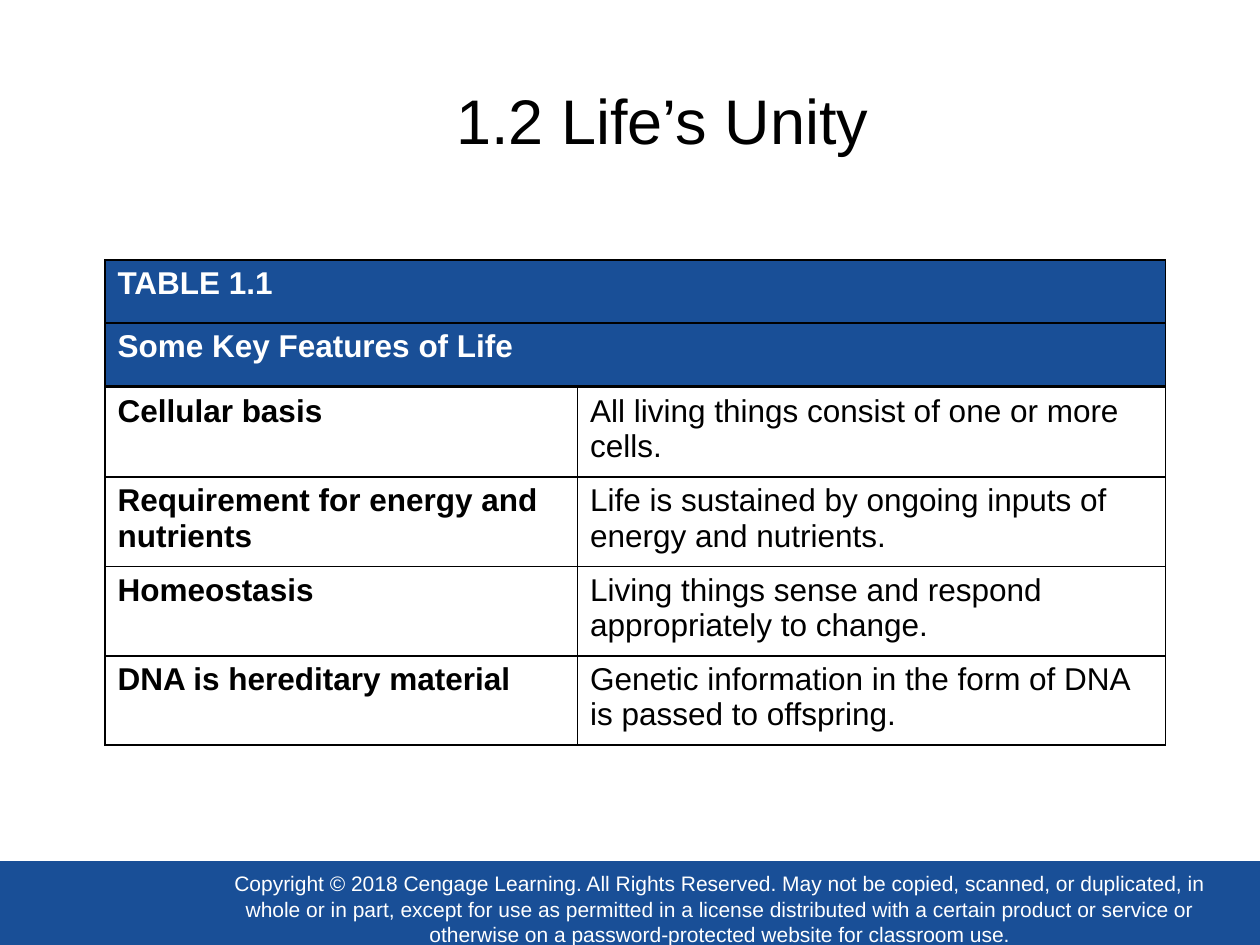
from lxml import etree
from pptx import Presentation
from pptx.dml.color import RGBColor
from pptx.enum import shapes, text
from pptx.oxml.ns import qn
from pptx.util import Pt

BLUE, WHITE, BLACK = "194F97", "FFFFFF", "000000"
FONT = "Arial"
COPYRIGHT = (
    "Copyright © 2018 Cengage Learning. All Rights Reserved. May not be copied, "
    "scanned, or duplicated, in whole or in part, except for use as permitted in "
    "a license distributed with a certain product or service or otherwise on a "
    "password-protected website for classroom use."
)
HEADINGS = [["TABLE 1.1"], ["Some Key Features of Life"]]
FEATURES = [
    ["Cellular basis", "All living things consist of one or more cells."],
    ["Requirement for energy and nutrients",
     "Life is sustained by ongoing inputs of energy and nutrients."],
    ["Homeostasis", "Living things sense and respond appropriately to change."],
    ["DNA is hereditary material",
     "Genetic information in the form of DNA is passed to offspring."],
]


def rgb(color):
    return RGBColor.from_string(color)


def add_run(p, words, size, color, bold=False):
    r = p.add_run()
    r.text = words
    r.font.name, r.font.size, r.font.bold = FONT, Pt(size), bold
    r.font.color.rgb = rgb(color)


def add_bar(slide, x, y, w, h):
    sp = slide.shapes.add_shape(
        shapes.MSO_SHAPE.RECTANGLE, Pt(x), Pt(y), Pt(w), Pt(h))
    sp.shadow.inherit = False
    sp.fill.solid()
    sp.fill.fore_color.rgb = rgb(BLUE)
    sp.line.fill.background()
    return sp


def add_footer(slide, x, y, w, h):
    add_bar(slide, x, y, w, h)
    # Copyright line, inset in the band
    tf = add_bar(slide, x + 121, y + 6.5, 582, h - 7).text_frame
    tf.word_wrap = True
    tf.vertical_anchor = text.MSO_ANCHOR.MIDDLE
    tf.margin_left = tf.margin_right = tf.margin_top = tf.margin_bottom = 0
    p = tf.paragraphs[0]
    p.alignment = text.PP_ALIGN.CENTER
    add_run(p, COPYRIGHT, 12, WHITE)


def add_title(slide, x, y, w, h):
    sp = slide.shapes.title
    sp.left, sp.top, sp.width, sp.height = Pt(x), Pt(y), Pt(w), Pt(h)
    tf = sp.text_frame
    tf.vertical_anchor = text.MSO_ANCHOR.MIDDLE
    p = tf.paragraphs[0]
    p.alignment = text.PP_ALIGN.CENTER
    add_run(p, "1.2 Life’s Unity", 36, BLACK)


def set_borders(cell, color, width):
    tc_pr = cell._tc.get_or_add_tcPr()
    for i, side in enumerate(("lnL", "lnR", "lnT", "lnB")):
        ln = etree.Element(qn(f"a:{side}"), w=str(Pt(width)))
        fill = etree.SubElement(ln, qn("a:solidFill"))
        etree.SubElement(fill, qn("a:srgbClr"), val=color)
        tc_pr.insert(i, ln)


def add_grid(slide, x, y, col_widths, row_height, rows, color, fill=None):
    frame = slide.shapes.add_table(
        len(rows), len(col_widths), Pt(x), Pt(y),
        Pt(sum(col_widths)), Pt(row_height * len(rows)))
    table = frame.table
    table.first_row = table.horz_banding = False
    for col, width in zip(table.columns, col_widths):
        col.width = Pt(width)
    for i, row in enumerate(rows):
        table.rows[i].height = Pt(row_height)
        for j, words in enumerate(row):
            cell = table.cell(i, j)
            if fill:
                cell.fill.solid()
                cell.fill.fore_color.rgb = rgb(fill)
            else:
                cell.fill.background()
            set_borders(cell, BLACK, 1)
            # The first column holds the bold labels
            add_run(cell.text_frame.paragraphs[0], words, 18, color, bold=j == 0)


def main():
    prs = Presentation()
    prs.slide_width, prs.slide_height = Pt(720), Pt(540)
    slide = prs.slides.add_slide(prs.slide_layouts[5])
    slide.background.fill.solid()
    slide.background.fill.fore_color.rgb = rgb(WHITE)

    add_footer(slide, -0.5, 492, 721, 48.5)
    add_title(slide, 62.5, 35.5, 632, 65.5)
    # Heading rows, then the features below them
    add_grid(slide, 60, 148.5, [606], 36, HEADINGS, WHITE, BLUE)
    add_grid(slide, 60, 221.5, [270, 336], 51.1, FEATURES, BLACK)
    prs.save("out.pptx")


if __name__ == "__main__":
    main()
